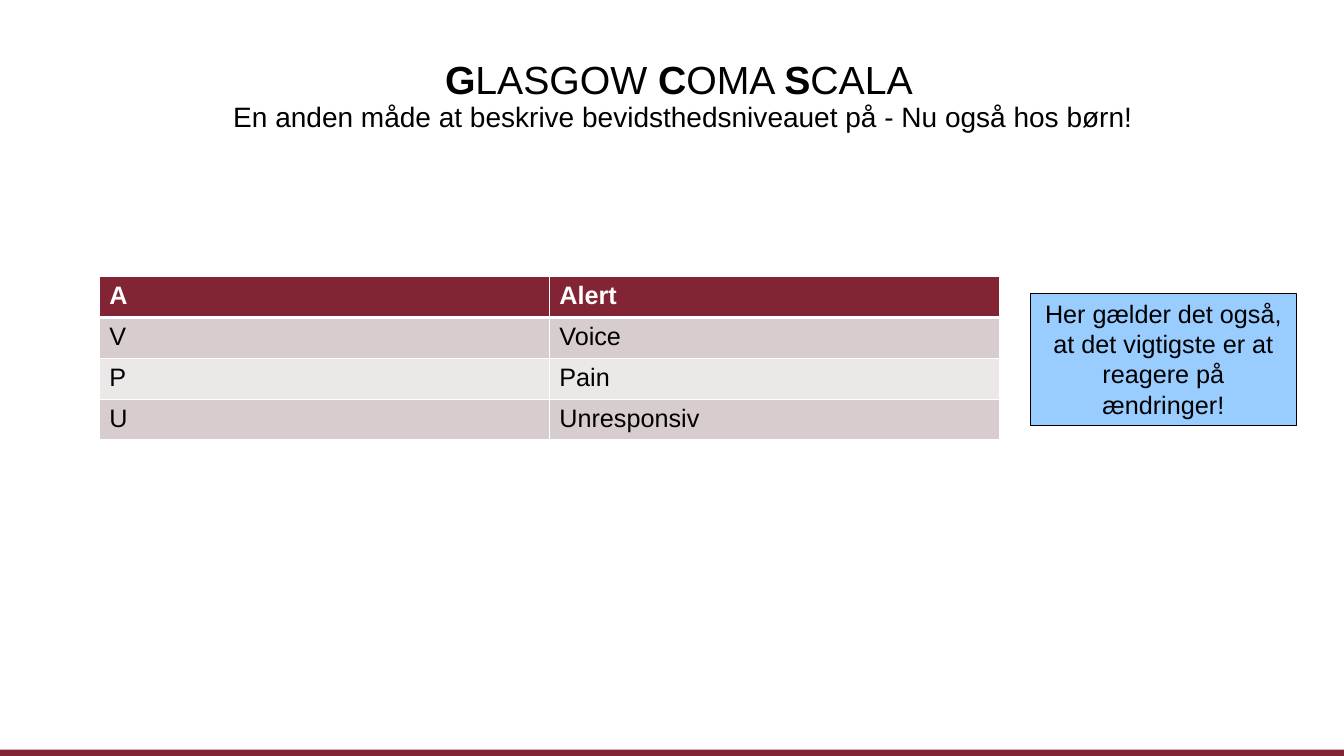
from lxml import etree
from pptx import Presentation
from pptx.dml.color import RGBColor
from pptx.enum.shapes import MSO_SHAPE
from pptx.enum.text import MSO_ANCHOR, PP_ALIGN
from pptx.oxml.ns import qn
from pptx.util import Pt

RECT = MSO_SHAPE.RECTANGLE
MIDDLE, TOP = MSO_ANCHOR.MIDDLE, MSO_ANCHOR.TOP
CENTER, LEFT = PP_ALIGN.CENTER, PP_ALIGN.LEFT

COLORS = {"maroon": "822433", "band": "D8CDCE", "light": "EDE8E8",
          "blue": "99CCFF", "black": "000000", "white": "FFFFFF"}

# Runs are (text, bold)
TITLE = [("G", True), ("LASGOW ", False), ("C", True), ("OMA ", False),
         ("S", True), ("CALA ", False)]
SUBTITLE = [("En anden måde at beskrive bevidsthedsniveauet på - "
             "Nu også hos børn!", False)]
NOTE = [("Her gælder det også, at det vigtigste er at reagere på ændringer!",
         False)]
AVPU = [("A", "Alert"), ("V", "Voice"), ("P", "Pain"), ("U", "Unresponsiv")]

WIDTH, HEIGHT = 960, 540
BAR_H = 4.5
TITLE_BOX = (60, 21.5, 856, 96)
NOTE_BOX = (736, 209.5, 190, 94.5)
TABLE_LEFT, TABLE_TOP, COL_W, ROW_H = 70.9, 197.5, 321.5, 29.2


def rgb(name):
    return RGBColor.from_string(COLORS[name])


def write(p, runs, size, color="black", align=CENTER, spacing=None):
    p.alignment = align
    p.line_spacing = spacing
    for text, bold in runs:
        r = p.add_run()
        r.text = text
        r.font.color.rgb = rgb(color)
        for name, value in {"name": "Arial", "size": Pt(size), "bold": bold}.items():
            setattr(r.font, name, value)


def add_rect(s, box, fill):
    sp = s.shapes.add_shape(RECT, *map(Pt, box))
    sp.shadow.inherit = False
    sp.fill.solid()
    sp.fill.fore_color.rgb = rgb(fill)
    sp.line.fill.background()
    return sp


def add_borders(cell, bottom):
    """Draw white cell borders; must run before the cell is filled."""
    tc_pr = cell._tc.get_or_add_tcPr()
    for side, width in {"L": 1, "R": 1, "T": 1, "B": bottom}.items():
        ln = etree.SubElement(tc_pr, qn(f"a:ln{side}"), w=str(Pt(width)))
        fill = etree.SubElement(ln, qn("a:solidFill"))
        etree.SubElement(fill, qn("a:srgbClr"), val=COLORS["white"])


def add_avpu_table(s):
    rows, cols = len(AVPU), len(AVPU[0])
    table = s.shapes.add_table(rows, cols, Pt(TABLE_LEFT), Pt(TABLE_TOP),
                               Pt(cols * COL_W), Pt(rows * ROW_H)).table
    for col in table.columns:
        col.width = Pt(COL_W)
    for i, row in enumerate(AVPU):
        table.rows[i].height = Pt(ROW_H)
        header = i == 0
        fill = "maroon" if header else ("light", "band")[i % 2]
        for j, text in enumerate(row):
            cell = table.cell(i, j)
            add_borders(cell, 3 if header else 1)
            cell.fill.solid()
            cell.fill.fore_color.rgb = rgb(fill)
            cell.vertical_anchor = TOP
            write(cell.text_frame.paragraphs[0], [(text, header)], 18,
                  "white" if header else "black", LEFT)


def main():
    prs = Presentation()
    prs.slide_width, prs.slide_height = Pt(WIDTH), Pt(HEIGHT)
    s = prs.slides.add_slide(prs.slide_layouts[6])

    add_rect(s, (0, HEIGHT - BAR_H, WIDTH, BAR_H), "maroon")

    tf = s.shapes.add_textbox(*map(Pt, TITLE_BOX)).text_frame
    tf.word_wrap = True
    tf.vertical_anchor = MIDDLE
    write(tf.paragraphs[0], TITLE, 28, spacing=0.9)
    write(tf.add_paragraph(), SUBTITLE, 20, spacing=0.9)

    note = add_rect(s, NOTE_BOX, "blue")
    note.line.color.rgb = rgb("black")
    note.line.width = Pt(0.75)
    tf = note.text_frame
    tf.word_wrap = True
    tf.vertical_anchor = TOP
    write(tf.paragraphs[0], NOTE, 18)

    add_avpu_table(s)
    prs.save("out.pptx")


if __name__ == "__main__":
    main()
